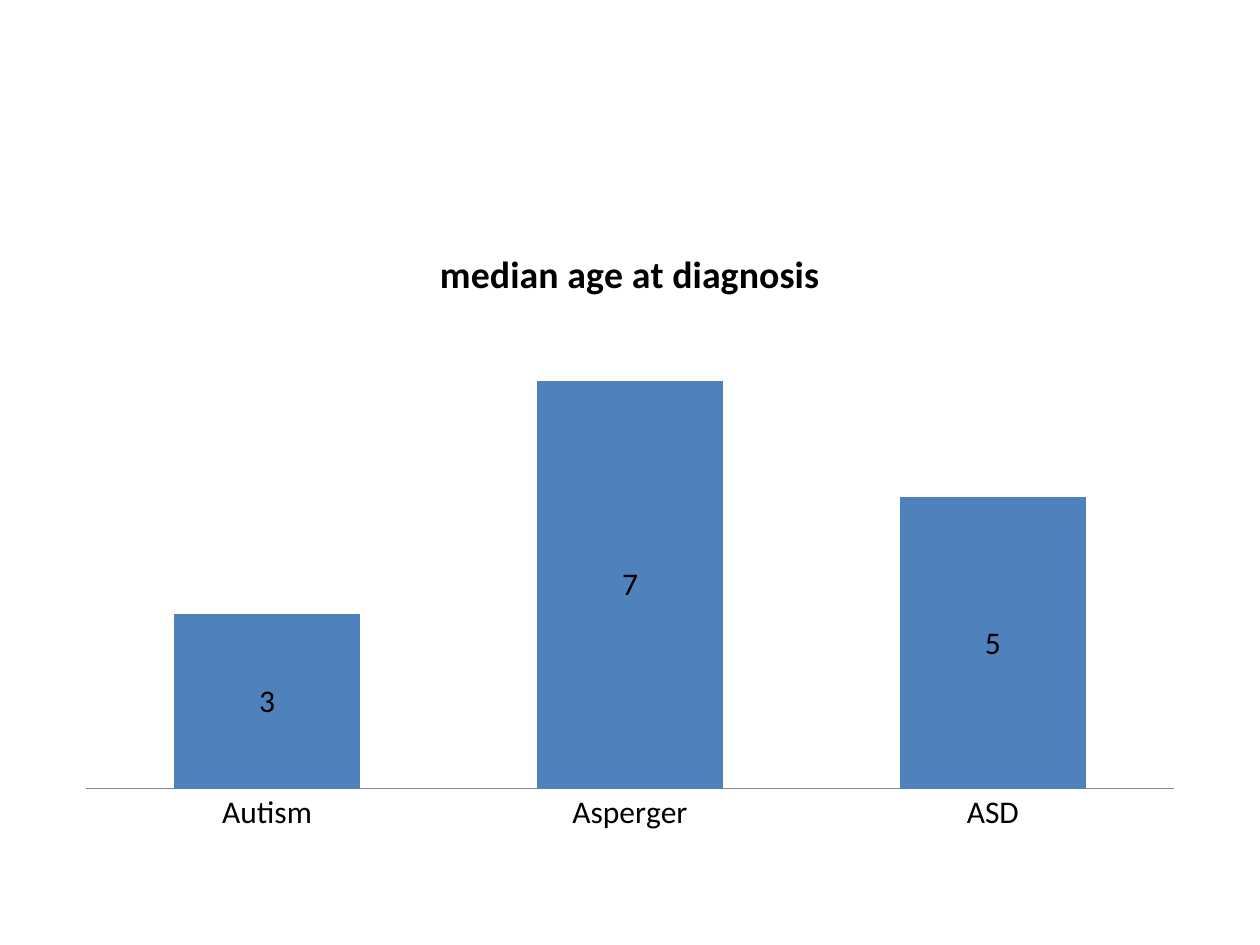
from pptx import Presentation
from pptx.chart.data import CategoryChartData
from pptx.dml.color import RGBColor
from pptx.enum.chart import XL_CHART_TYPE as ChartType
from pptx.enum.chart import XL_LABEL_POSITION as LabelPos
from pptx.enum.chart import XL_TICK_MARK as TickMark
from pptx.util import Cm, Pt

FONT = "Calibri"
TITLE = "median age at diagnosis"
AGES = {"Autism": 3, "Asperger": 7, "ASD": 5}


def rgb(value):
    """Return the colour for a hex string."""
    return RGBColor.from_string(value)


def style_font(font, size, bold=False):
    """Apply the chart's typeface in black."""
    font.name = FONT
    font.size = Pt(size)
    font.bold = bold
    font.color.rgb = rgb("000000")


def add_title(chart, text):
    """Give the chart a bold heading above the plot."""
    chart.has_title = True
    chart.chart_title.include_in_layout = False
    r = chart.chart_title.text_frame.paragraphs[0].add_run()
    r.text = text
    style_font(r.font, 21.6, bold=True)


def style_axes(chart):
    """Keep only the category line and its labels."""
    cat, val = chart.category_axis, chart.value_axis
    cat.major_tick_mark = cat.minor_tick_mark = TickMark.NONE
    cat.has_major_gridlines = False
    cat.format.line.color.rgb = rgb("868686")
    cat.format.line.width = Pt(0.75)
    val.has_major_gridlines = False
    val.minimum_scale, val.maximum_scale = 0, 8
    val.visible = False


def style_bars(plot):
    """Colour the columns and label them with their values."""
    plot.gap_width = 95
    plot.overlap = 100
    plot.vary_by_categories = False
    fill = plot.series[0].format.fill
    fill.solid()
    fill.fore_color.rgb = rgb("4F81BD")
    plot.has_data_labels = True
    labels = plot.data_labels
    labels.show_value = True
    labels.position = LabelPos.CENTER
    style_font(labels.font, 18)


def add_column_chart(s, title, values):
    """Add a stacked column chart with one series."""
    data = CategoryChartData()
    data.categories = list(values)
    data.add_series(title, list(values.values()))
    chart = s.shapes.add_chart(
        ChartType.COLUMN_STACKED, Cm(1.27), Cm(4.45), Cm(22.86), Cm(12.57), data
    ).chart
    chart.has_legend = False
    style_font(chart.font, 18)
    add_title(chart, title)
    style_axes(chart)
    style_bars(chart.plots[0])


def main():
    """Build the slide and save it."""
    prs = Presentation()
    prs.slide_width, prs.slide_height = Cm(25.4), Cm(19.05)
    s = prs.slides.add_slide(prs.slide_layouts[6])
    add_column_chart(s, TITLE, AGES)
    prs.save("out.pptx")


if __name__ == "__main__":
    main()
